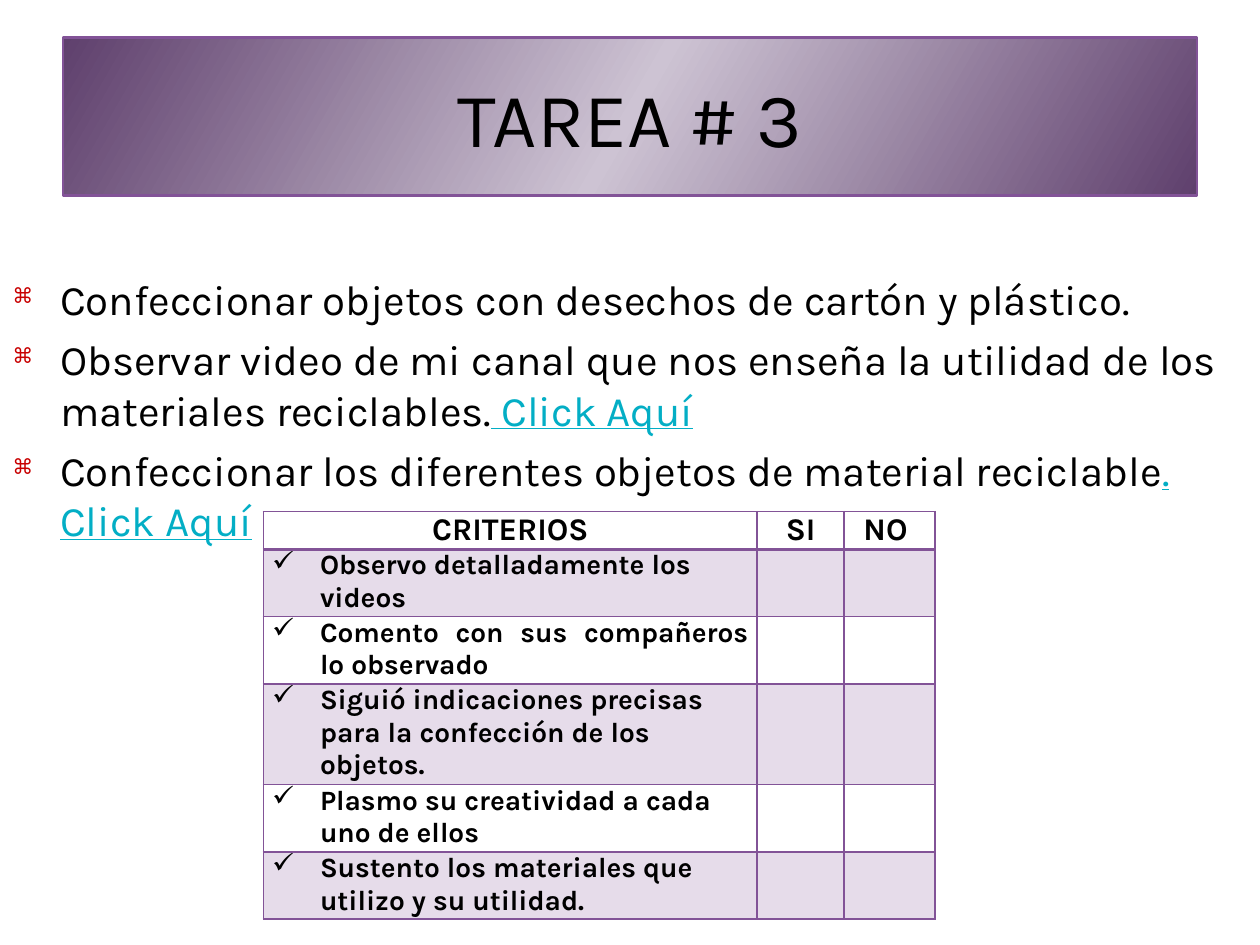
from lxml import etree
from pptx import Presentation
from pptx import util as u
from pptx.dml.color import RGBColor
from pptx.enum import shapes, text
from pptx.oxml import ns

HUES = {"ink": "000000", "link": "03AEC5", "mark": "C80000",
        "edge": "825397", "dark": "5F406D", "pale": "CDC3D3"}
ALIGN = text.PP_ALIGN
INDENT = 0.38

TASKS = [
    ("Confeccionar objetos con desechos de cartón y plástico.", ""),
    ("Observar video de mi canal que nos enseña la utilidad de los "
     "materiales reciclables.", " Click Aquí"),
    ("Confeccionar los diferentes objetos de material reciclable", ". Click Aquí"),
]
HEADS = ["CRITERIOS", "SI", "NO "]
GOALS = [
    "Observo detalladamente los videos",
    "Comento con sus compañeros lo observado",
    "Siguió indicaciones precisas para la confección de los objetos.",
    "Plasmo su creatividad a cada uno de ellos",
    "Sustento los materiales que utilizo y su utilidad.",
]
COLS = [3.92, 0.69, 0.72]
ROWS = [0.29, 0.53, 0.53, 0.8, 0.53, 0.53]


def apply(item, **vals):
    for key, val in vals.items():
        setattr(item, key, val)


def add(node, tag, **atts):
    return etree.SubElement(node, ns.qn("a:" + tag), atts)


class Deck:
    def __init__(self, font):
        self.font = font
        self.prs = Presentation()
        apply(self.prs, slide_width=u.Inches(10), slide_height=u.Inches(7.5))
        self.slide = self.prs.slides.add_slide(self.prs.slide_layouts[6])

    def hue(self, name):
        return RGBColor.from_string(HUES[name])

    def run(self, par, words, size, hue="ink", **form):
        run = par.add_run()
        run.text = words
        apply(run.font, name=self.font, size=u.Pt(size), **form)
        run.font.color.rgb = self.hue(hue)

    def bullet(self, par, sign, hue=None, size=None):
        """Give the paragraph a hanging bullet, with its own colour and size in percent."""
        props = par._p.get_or_add_pPr()
        gap = u.Inches(INDENT)
        props.set("marL", str(gap))
        props.set("indent", str(-gap))
        if hue:
            add(add(props, "buClr"), "srgbClr", val=HUES[hue])
        if size:
            add(props, "buSzPct", val=str(size * 1000))
        add(props, "buChar", char=sign)

    def banner(self, words, box):
        shape = self.slide.shapes.add_shape(
            shapes.MSO_SHAPE.RECTANGLE, *map(u.Inches, box))
        shape.shadow.inherit = False
        shape.line.color.rgb = self.hue("edge")
        shape.line.width = u.Pt(1.57)
        self.blend(shape, ["dark", "pale", "dark"], 30)
        frame = shape.text_frame
        apply(frame, word_wrap=True, vertical_anchor=text.MSO_ANCHOR.MIDDLE)
        par = frame.paragraphs[0]
        par.alignment = ALIGN.CENTER
        self.run(par, words, 44)

    def blend(self, shape, hues, angle):
        """Fill with evenly spaced gradient stops; the angle runs clockwise."""
        shape.fill.gradient()
        grad = shape._element.spPr.find(ns.qn("a:gradFill"))
        for child in list(grad):
            grad.remove(child)
        stops = add(grad, "gsLst")
        for i, hue in enumerate(hues):
            stop = add(stops, "gs", pos=str(100000 * i // (len(hues) - 1)))
            add(stop, "srgbClr", val=HUES[hue])
        add(grad, "lin", ang=str(angle * 60000), scaled="0")

    def tasks(self, items, box):
        frame = self.slide.shapes.add_textbox(*map(u.Inches, box)).text_frame
        apply(frame, word_wrap=True, margin_top=u.Inches(0.47))
        for i, (words, link) in enumerate(items):
            par = frame.add_paragraph() if i else frame.paragraphs[0]
            par.space_before = u.Pt(5.7)
            self.bullet(par, "⌘", "mark", 50)
            self.run(par, words, 24)
            if link:
                self.run(par, link, 24, "link", underline=True)

    def cell(self, cell, shaded, under):
        apply(cell, margin_left=u.Inches(0.07), margin_right=u.Inches(0.07),
              margin_top=0, margin_bottom=0)
        props = cell._tc.get_or_add_tcPr()
        if shaded:
            cell.fill.solid()
            cell.fill.fore_color.rgb = self.hue("edge")
            add(props.find(".//" + ns.qn("a:srgbClr")), "alpha", val="20000")
        else:
            cell.fill.background()
        for i, side in enumerate("LRTB"):
            width = under if side == "B" else 1
            line = add(props, "ln" + side, w=str(u.Pt(width)))
            add(add(line, "solidFill"), "srgbClr", val=HUES["edge"])
            props.insert(i, line)

    def rubric(self, heads, goals, left, top):
        size = u.Inches(sum(COLS)), u.Inches(sum(ROWS))
        table = self.slide.shapes.add_table(
            len(ROWS), len(COLS), u.Inches(left), u.Inches(top), *size).table
        apply(table, first_row=False, horz_banding=False)
        for col, width in zip(table.columns, COLS):
            col.width = u.Inches(width)
        for r, (row, height) in enumerate(zip(table.rows, ROWS)):
            row.height = u.Inches(height)
            for cell in row.cells:
                self.cell(cell, r % 2 == 1, 1 if r else 2)
        for c, head in enumerate(heads):
            par = table.cell(0, c).text_frame.paragraphs[0]
            par.alignment = ALIGN.CENTER
            self.run(par, head, 18, bold=True)
        for r, goal in enumerate(goals, 1):
            par = table.cell(r, 0).text_frame.paragraphs[0]
            par.alignment = ALIGN.JUSTIFY if r == 2 else ALIGN.LEFT
            self.bullet(par, "✓")
            self.run(par, goal, 16, bold=True)


def main():
    deck = Deck("Karla")
    deck.banner("TAREA # 3", (0.5, 0.3, 9, 1.25))
    deck.tasks(TASKS, (0, 1.7, 10, 5.8))
    deck.rubric(HEADS, GOALS, 2.09, 4.06)
    deck.prs.save("out.pptx")


if __name__ == "__main__":
    main()
